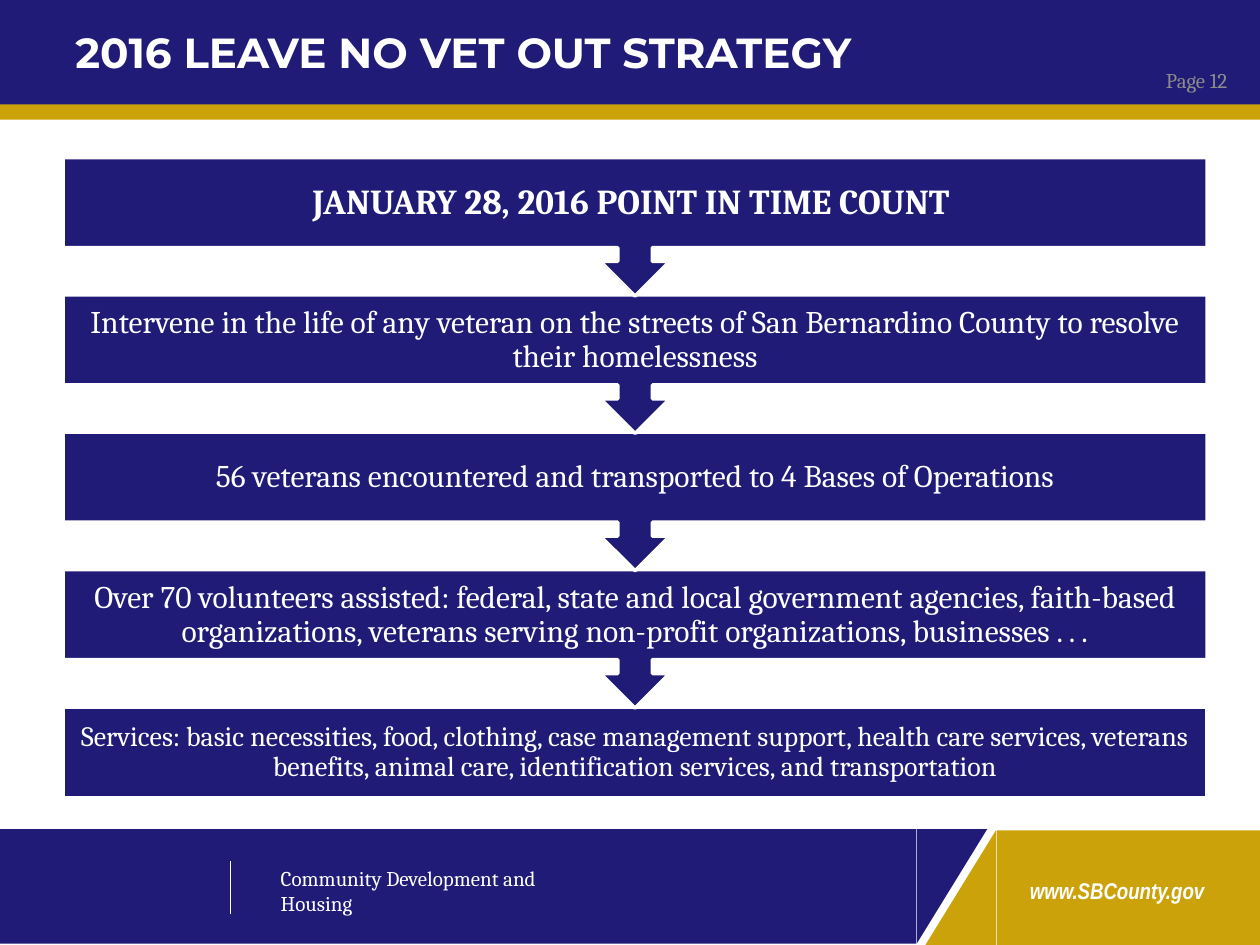
from dataclasses import dataclass

from lxml import etree
from pptx import Presentation
from pptx import util as u
from pptx.dml.color import RGBColor
from pptx.enum import shapes, text
from pptx.oxml.ns import qn

Inches, Pt = u.Inches, u.Pt
SHAPE, ALIGN, ANCHOR = shapes.MSO_SHAPE, text.PP_ALIGN, text.MSO_ANCHOR


@dataclass(frozen=True)
class Theme:
    navy: str = "1F1B77"
    gold: str = "CCA20A"
    white: str = "FFFFFF"
    gray: str = "8C8C8C"
    heading: str = "Montserrat"
    body: str = "Cambria"
    narrow: str = "Arial Narrow"
    title_size: int = 24
    lead_size: int = 20
    step_size: int = 18
    services_size: int = 16
    url_size: int = 13
    small_size: int = 12


THEME = Theme()

# Steps from top to bottom: wording, type size, inset, bold
STEPS = [
    ("JANUARY 28, 2016 POINT IN TIME COUNT ", THEME.lead_size, 0.16, True),
    ("Intervene in the life of any veteran on the streets of San Bernardino "
     "County to resolve their homelessness", THEME.step_size, 0.14, False),
    ("56 veterans encountered and transported to 4 Bases of Operations",
     THEME.step_size, 0.14, False),
    ("Over 70 volunteers assisted: federal, state and local government agencies, "
     "faith-based organizations, veterans serving non-profit organizations, "
     "businesses . . .", THEME.step_size, 0.14, False),
    ("Services: basic necessities, food, clothing, case management support, "
     "health care services, veterans benefits, animal care, identification "
     "services, and transportation", THEME.services_size, 0.12, False),
]


def rgb(color):
    return RGBColor.from_string(color)


def add_block(slide, box, color, kind=SHAPE.RECTANGLE, rotation=0, outline=None):
    block = slide.shapes.add_shape(kind, *map(Inches, box))
    block.shadow.inherit = False
    block.rotation = rotation
    block.fill.solid()
    block.fill.fore_color.rgb = rgb(color)
    if outline:
        block.line.color.rgb = rgb(outline)
        block.line.width = Pt(2)
    else:
        block.line.fill.background()


def add_label(slide, box, wording, size, font=THEME.body, color=THEME.white,
              align=ALIGN.LEFT, anchor=ANCHOR.TOP, bold=False, italic=False):
    frame = slide.shapes.add_textbox(*map(Inches, box)).text_frame
    frame.word_wrap = True
    frame.vertical_anchor = anchor
    paragraph = frame.paragraphs[0]
    paragraph.text = wording
    paragraph.alignment = align
    paragraph.font.name = font
    paragraph.font.size = Pt(size)
    paragraph.font.color.rgb = rgb(color)
    paragraph.font.bold = bold
    paragraph.font.italic = italic
    return frame


def add_header(slide, left, top, width):
    # Gold rule below the navy band
    add_block(slide, (left, top + 0.79, width, 0.16), THEME.gold)
    add_block(slide, (left, top, width, 0.83), THEME.navy)
    add_label(slide, (left + 8.67, top + 0.44, 1.17, 0.4), "Page 12",
              THEME.small_size, color=THEME.gray, align=ALIGN.RIGHT,
              anchor=ANCHOR.MIDDLE)
    title = add_label(slide, (left + 0.5, top - 0.01, 9, 1.25),
                      "2016 LEAVE NO VET OUT STRATEGY", THEME.title_size,
                      THEME.heading, anchor=ANCHOR.MIDDLE, bold=True)
    # Lifts the title into the navy band
    title.margin_bottom = Inches(0.46)


def add_footer(slide, left, top, width, height):
    slant = 0.56
    triangle_top = top + (height - slant) / 2

    # Gold and navy panels, each with a slanted end
    add_block(slide, (left + 7.91, top + 0.01, width - 7.91, height), THEME.gold)
    add_block(slide, (left + 7.17, triangle_top + 0.01, height, slant),
              THEME.gold, SHAPE.RIGHT_TRIANGLE, 270)
    add_block(slide, (left - 0.01, top, 7.28, height), THEME.navy)
    add_block(slide, (left + 7.1, triangle_top, height, slant),
              THEME.navy, SHAPE.RIGHT_TRIANGLE, 90)

    # Divider and department
    x = Inches(left + 1.83)
    divider = slide.shapes.add_connector(
        shapes.MSO_CONNECTOR.STRAIGHT,
        x, Inches(top + 0.25), x, Inches(top + 0.67))
    divider.line.color.rgb = rgb(THEME.white)
    divider.line.width = Pt(0.25)
    etree.SubElement(divider.element.spPr, qn("a:effectLst"))
    add_label(slide, (left + 2.13, top + 0.24, 2.77, 0.3),
              "Community Development and Housing", THEME.small_size)

    # Web address
    add_label(slide, (left + 7.74, top + 0.33, 2.25, 0.32), "www.SBCounty.gov",
              THEME.url_size, THEME.narrow, align=ALIGN.CENTER, bold=True,
              italic=True)


def add_steps(slide, left, top, width):
    pitch, box_height, callout_height = 1.09, 0.72, 1.1
    last = len(STEPS) - 1
    # Drawn from the bottom up, so each arrow tip lies over the next box
    for row in range(last, -1, -1):
        wording, size, inset, bold = STEPS[row]
        y = top + row * pitch
        if row == last:
            add_block(slide, (left, y, width, box_height), THEME.navy,
                      outline=THEME.white)
        else:
            add_block(slide, (left, y, width, callout_height), THEME.navy,
                      SHAPE.UP_ARROW_CALLOUT, 180, THEME.white)
        frame = add_label(slide, (left, y, width, box_height), wording, size,
                          align=ALIGN.CENTER, anchor=ANCHOR.MIDDLE, bold=bold)
        frame.margin_left = frame.margin_right = Inches(inset)
        frame.margin_top = frame.margin_bottom = Inches(inset)
        frame.paragraphs[0].line_spacing = 0.9


def main():
    deck = Presentation()
    deck.slide_width, deck.slide_height = Inches(10), Inches(7.5)
    slide = deck.slides.add_slide(deck.slide_layouts[6])
    add_header(slide, 0, 0, 10.01)
    add_footer(slide, 0, 6.58, 10, 0.91)
    add_steps(slide, 0.5, 1.25, 9.08)
    deck.save("out.pptx")


if __name__ == "__main__":
    main()
